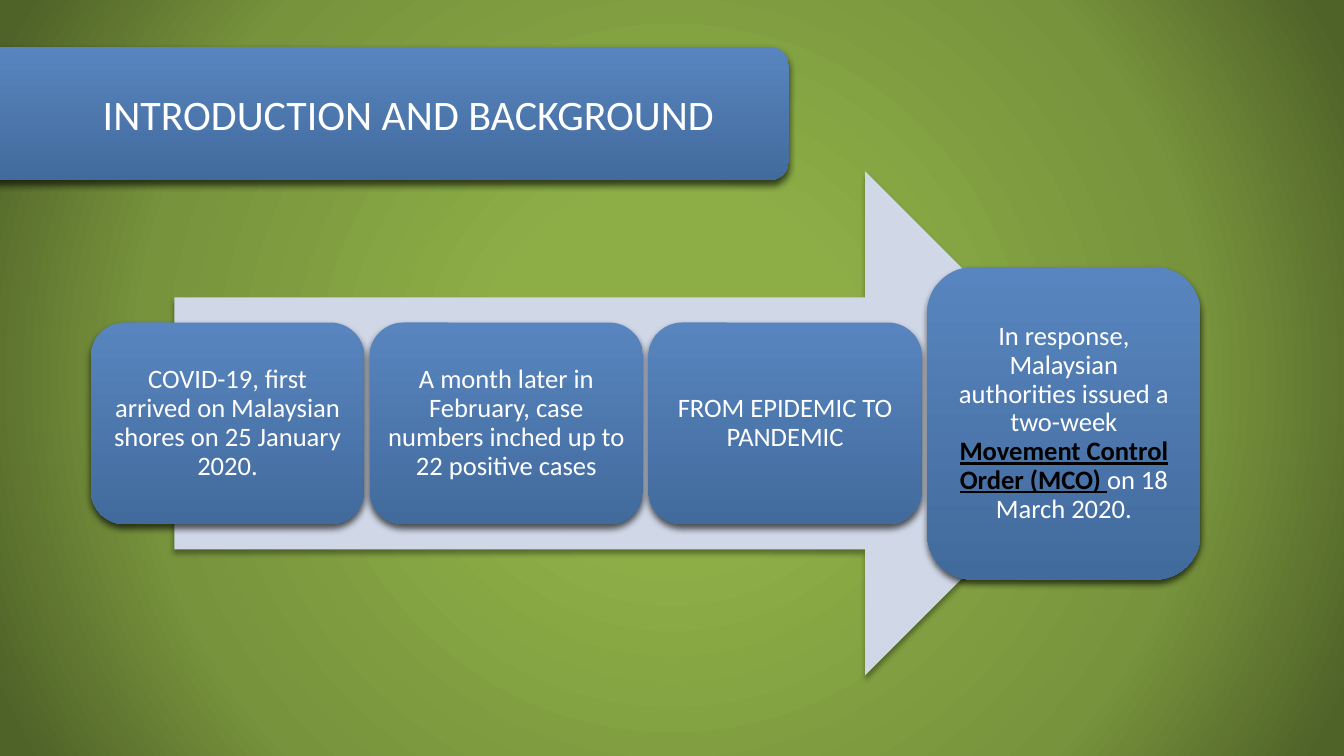
from lxml import etree
from pptx import Presentation
from pptx.dml.color import RGBColor
from pptx.enum import shapes, text
from pptx.oxml import parse_xml
from pptx.oxml.ns import nsdecls, qn
from pptx.util import Pt

W, H = 960, 540
FONT = "Calibri"
WHITE, BLACK = "FFFFFF", "000000"
BLUES = ("5885BF", "426B9D")
GREENS = ((0, "8DAE47"), (23, "8DAE47"), (69, "77933C"), (97, "4F6228"))
CARDS = (
    (144, [("COVID-19, first arrived on Malaysian shores on 25 January 2020.", False)]),
    (144, [("A month later in February, case numbers inched up to 22 positive cases", False)]),
    (144, [("FROM EPIDEMIC TO PANDEMIC", False)]),
    (223.2, [("In response, Malaysian authorities issued a two-week ", False),
             ("Movement Control Order (MCO) ", True),
             ("on 18 March 2020.", False)]),
)


def rgb(color):
    return RGBColor.from_string(color)


def add_background(s):
    """Radial green gradient, light in the middle and dark at the corners."""
    stops = "".join(
        f'<a:gs pos="{pos * 1000}"><a:srgbClr val="{color}"/></a:gs>' for pos, color in GREENS)
    s.element.cSld.insert(0, parse_xml(
        f'<p:bg {nsdecls("p", "a")}><p:bgPr><a:gradFill rotWithShape="1">'
        f'<a:gsLst>{stops}</a:gsLst><a:path path="circle">'
        '<a:fillToRect l="50000" t="50000" r="50000" b="50000"/></a:path>'
        '</a:gradFill><a:effectLst/></p:bgPr></p:bg>'))


def add_shadow(sp, opacity, blur):
    sp.shadow.inherit = False
    effects = sp.element.spPr.find(qn("a:effectLst"))
    shadow = etree.SubElement(effects, qn("a:outerShdw"), blurRad=str(Pt(blur)),
                              dist=str(Pt(3)), dir="5400000", rotWithShape="0")
    color = etree.SubElement(shadow, qn("a:srgbClr"), val=BLACK)
    etree.SubElement(color, qn("a:alpha"), val=str(opacity * 1000))


def add_blue_panel(s, x, y, w, h):
    sp = s.shapes.add_shape(shapes.MSO_SHAPE.ROUNDED_RECTANGLE, Pt(x), Pt(y), Pt(w), Pt(h))
    sp.fill.gradient()
    sp.fill.gradient_angle = 270
    for stop, color in zip(sp.fill.gradient_stops, BLUES):
        stop.color.rgb = rgb(color)
    sp.line.fill.background()
    add_shadow(sp, 65, 5)
    return sp


def add_title(s, x, y, w, h):
    """Title on a band that runs in from the left edge of the slide."""
    band = add_blue_panel(s, x, y, w, h)
    band.adjustments[0] = 0.14
    title = s.shapes.title
    band.element.addnext(title.element)
    indent = 90.7
    title.left, title.top, title.width, title.height = Pt(x + indent), Pt(y - 4.5), Pt(w - indent), Pt(h + 9)
    tf = title.text_frame
    tf.text = "INTRODUCTION AND BACKGROUND"
    tf.vertical_anchor = text.MSO_ANCHOR.MIDDLE
    p = tf.paragraphs[0]
    p.alignment = text.PP_ALIGN.LEFT
    p.font.name, p.font.size, p.font.color.rgb = FONT, Pt(30), rgb(WHITE)


def add_card(s, x, y, w, h, runs):
    sp = add_blue_panel(s, x, y, w, h)
    tf = sp.text_frame
    tf.word_wrap = True
    tf.vertical_anchor = text.MSO_ANCHOR.MIDDLE
    tf.margin_left = tf.margin_top = tf.margin_right = tf.margin_bottom = Pt(5.7)
    p = tf.paragraphs[0]
    p.alignment = text.PP_ALIGN.CENTER
    p.line_spacing = 0.9
    p.font.name, p.font.size = FONT, Pt(19)
    for words, strong in runs:
        r = p.add_run()
        r.text = words
        r.font.color.rgb = rgb(BLACK if strong else WHITE)
        if strong:
            r.font.bold = r.font.underline = True


def add_timeline(s, x, y, w, h):
    """Wide arrow with a row of cards centred on its axis."""
    inset = 59.6
    arrow = s.shapes.add_shape(shapes.MSO_SHAPE.RIGHT_ARROW, Pt(x + inset), Pt(y),
                               Pt(w - 2 * inset), Pt(h))
    arrow.fill.solid()
    arrow.fill.fore_color.rgb = rgb("D0D8E8")
    arrow.line.fill.background()
    add_shadow(arrow, 35, 4)

    gap = 4
    card_w = (w - gap * (len(CARDS) - 1)) / len(CARDS)
    for i, (card_h, runs) in enumerate(CARDS):
        add_card(s, x + i * (card_w + gap), y + (h - card_h) / 2, card_w, card_h, runs)


def main():
    prs = Presentation()
    prs.slide_width, prs.slide_height = Pt(W), Pt(H)
    s = prs.slides.add_slide(prs.slide_layouts[5])
    add_background(s)
    add_title(s, -24.5, 33.5, 588, 95)
    add_timeline(s, 65, 122.4, 792.5, 360)
    prs.save("out.pptx")


if __name__ == "__main__":
    main()
